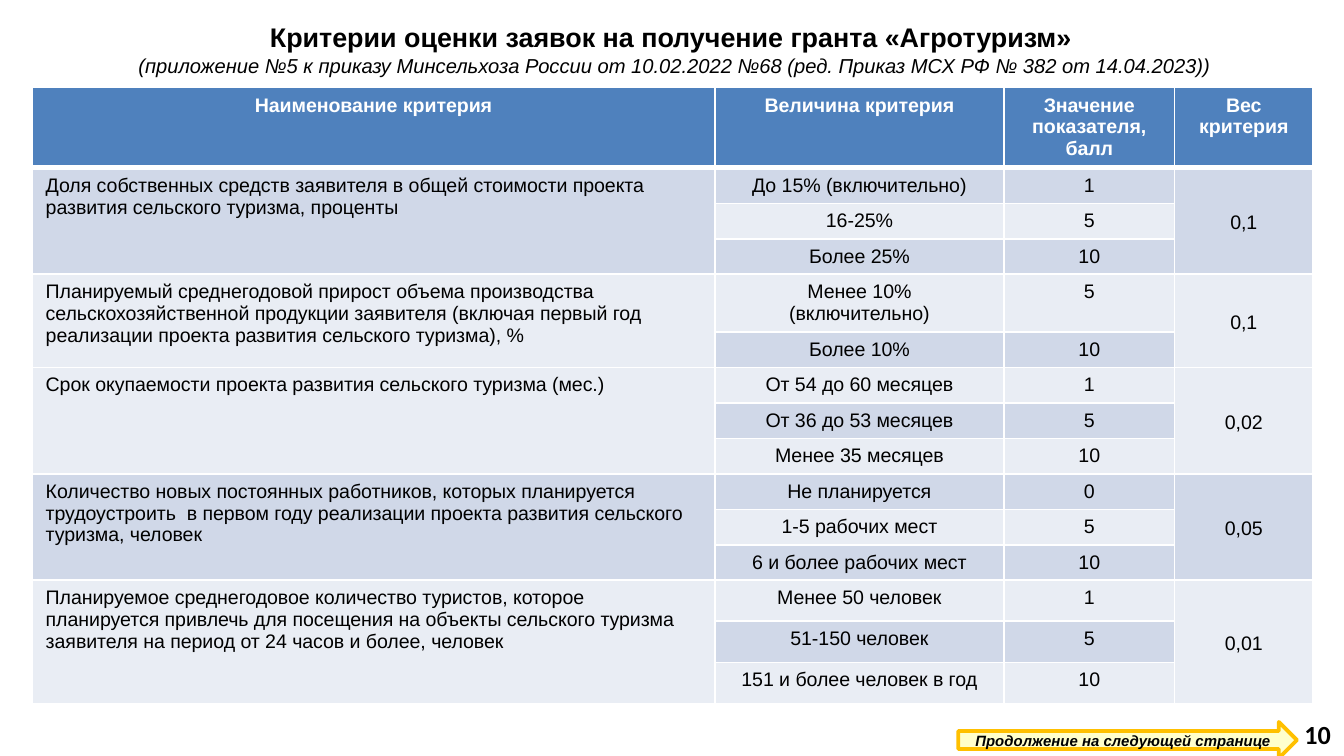
from dataclasses import dataclass

from lxml.etree import SubElement
from pptx import Presentation
from pptx.dml.color import RGBColor
from pptx.enum.shapes import MSO_SHAPE
from pptx.enum.text import MSO_ANCHOR, MSO_AUTO_SIZE, PP_ALIGN
from pptx.oxml.ns import qn
from pptx.slide import Slide
from pptx.table import Table, _Cell
from pptx.text.text import Font
from pptx.util import Inches, Pt

COLORS = {
    "header": "4F81BD",
    "band_dark": "D0D8E8",
    "band_light": "E9EDF4",
    "white": "FFFFFF",
    "black": "000000",
    "arrow_fill": "FFFFCC",
    "arrow_line": "FFC000",
}
SLIDE_WIDTH = Inches(10)
SLIDE_HEIGHT = SLIDE_WIDTH * 9 // 16
COLUMN_WIDTHS = (5.08, 2.15, 1.27, 1.03)
HEADER_POINTS = 43
HEADERS = ("Наименование критерия", "Величина критерия", "Значение показателя, балл", "Вес критерия")


@dataclass(frozen=True)
class Level:
    value: str
    score: str
    points: int = 19


@dataclass(frozen=True)
class Criterion:
    name: str
    weight: str
    levels: tuple[Level, ...]


CRITERIA = (
    Criterion(
        "Доля собственных средств заявителя в общей стоимости проекта развития сельского туризма, проценты",
        "0,1",
        (Level("До 15% (включительно)", "1"), Level("16-25%", "5"), Level("Более 25%", "10")),
    ),
    Criterion(
        "Планируемый среднегодовой прирост объема производства сельскохозяйственной продукции заявителя "
        "(включая первый год реализации проекта развития сельского туризма), %",
        "0,1",
        (Level("Менее 10%\n(включительно)", "5", 31), Level("Более 10%", "10")),
    ),
    Criterion(
        "Срок окупаемости проекта развития сельского туризма (мес.)",
        "0,02",
        (Level("От 54 до 60 месяцев", "1"), Level("От 36 до 53 месяцев", "5"), Level("Менее 35 месяцев", "10")),
    ),
    Criterion(
        "Количество новых постоянных работников, которых планируется трудоустроить  в первом году "
        "реализации проекта развития сельского туризма, человек",
        "0,05",
        (Level("Не планируется", "0"), Level("1-5 рабочих мест", "5"), Level("6 и более рабочих мест", "10")),
    ),
    Criterion(
        "Планируемое среднегодовое количество туристов, которое планируется привлечь для посещения "
        "на объекты сельского туризма заявителя на период от 24 часов и более, человек",
        "0,01",
        (
            Level("Менее 50 человек", "1", 22),
            Level("51-150 человек", "5", 22),
            Level("151 и более человек в год", "10", 22),
        ),
    ),
)


def share_box(left: float, top: float, width: float, height: float) -> tuple[int, int, int, int]:
    """Turn shares of the slide's size into a left, top, width, height box."""
    return (
        int(left * SLIDE_WIDTH),
        int(top * SLIDE_HEIGHT),
        int(width * SLIDE_WIDTH),
        int(height * SLIDE_HEIGHT),
    )


def color(name: str) -> RGBColor:
    """Look up a named colour."""
    return RGBColor.from_string(COLORS[name])


def set_font(font: Font, size: float, color_name: str = "black", bold: bool = False,
             italic: bool = False, family: str = "Arial") -> None:
    """Set every font property used on the slide."""
    font.name, font.size, font.bold, font.italic = family, Pt(size), bold, italic
    font.color.rgb = color(color_name)


def set_borders(cell: _Cell, top: float, bottom: float) -> None:
    """Draw white borders around a cell, with widths in points."""
    properties = cell._tc.get_or_add_tcPr()
    for tag, width in (("a:lnL", 1), ("a:lnR", 1), ("a:lnT", top), ("a:lnB", bottom)):
        line = SubElement(properties, qn(tag), w=str(Pt(width)))
        fill = SubElement(line, qn("a:solidFill"))
        SubElement(fill, qn("a:srgbClr"), val=COLORS["white"])


def write_cell(cell: _Cell, text: str, alignment: PP_ALIGN = PP_ALIGN.CENTER,
               anchor: MSO_ANCHOR = MSO_ANCHOR.TOP, header: bool = False) -> None:
    """Fill a cell with formatted text."""
    cell.text = text
    cell.vertical_anchor = anchor
    for paragraph in cell.text_frame.paragraphs:
        paragraph.alignment = alignment
        set_font(paragraph.font, 10.5, "white" if header else "black", bold=header)


def paint_table(table: Table) -> None:
    """Give all cells their banded fill, borders and bottom margin."""
    for index, row in enumerate(table.rows):
        band = "header" if index == 0 else "band_dark" if index % 2 else "band_light"
        for cell in row.cells:
            set_borders(cell, top=3 if index == 1 else 1, bottom=3 if index == 0 else 1)
            cell.fill.solid()
            cell.fill.fore_color.rgb = color(band)
            cell.margin_bottom = Inches(0.02)


def add_criteria_table(slide: Slide) -> None:
    """Add the table of criteria, levels, scores and weights."""
    heights = [HEADER_POINTS] + [level.points for criterion in CRITERIA for level in criterion.levels]
    box = share_box(0.024, 0.116, 0.953, Pt(sum(heights)) / SLIDE_HEIGHT)
    table = slide.shapes.add_table(len(heights), len(COLUMN_WIDTHS), *box).table
    for column, width in zip(table.columns, COLUMN_WIDTHS):
        column.width = Inches(width)
    for row, height in zip(table.rows, heights):
        row.height = Pt(height)
    paint_table(table)
    for column_index, header in enumerate(HEADERS):
        write_cell(table.cell(0, column_index), header, header=True)
    first = 1
    for criterion in CRITERIA:
        last = first + len(criterion.levels) - 1
        for column_index in (0, 3):
            table.cell(first, column_index).merge(table.cell(last, column_index))
        write_cell(table.cell(first, 0), criterion.name, PP_ALIGN.LEFT)
        write_cell(table.cell(first, 3), criterion.weight, anchor=MSO_ANCHOR.MIDDLE)
        for row_index, level in enumerate(criterion.levels, first):
            write_cell(table.cell(row_index, 1), level.value)
            write_cell(table.cell(row_index, 2), level.score)
        first = last + 1


def add_title(slide: Slide) -> None:
    """Place the title with its smaller italic second line."""
    title = slide.shapes.title
    title.left, title.top, title.width, title.height = share_box(0.052, 0.01, 0.9, 0.11)
    frame = title.text_frame
    frame.auto_size = MSO_AUTO_SIZE.NONE
    frame.vertical_anchor = MSO_ANCHOR.MIDDLE
    paragraph = frame.paragraphs[0]
    paragraph.alignment = PP_ALIGN.CENTER
    heading = paragraph.add_run()
    heading.text = "Критерии оценки заявок на получение гранта «Агротуризм» "
    set_font(heading.font, 14.4, bold=True)
    paragraph.add_line_break()
    source = paragraph.add_run()
    source.text = "(приложение №5 к приказу Минсельхоза России от 10.02.2022 №68 (ред. Приказ МСХ РФ № 382 от 14.04.2023))"
    set_font(source.font, 10.8, italic=True)


def add_page_number(slide: Slide) -> None:
    """Add the page number in the bottom right corner."""
    frame = slide.shapes.add_textbox(*share_box(0.952, 0.944, 0.048, 0.053)).text_frame
    frame.word_wrap = True
    frame.vertical_anchor = MSO_ANCHOR.MIDDLE
    paragraph = frame.paragraphs[0]
    paragraph.text = "10"
    paragraph.alignment = PP_ALIGN.RIGHT
    set_font(paragraph.font, 14, bold=True, family="Calibri")


def add_continuation_arrow(slide: Slide) -> None:
    """Add the arrow that points to the next page."""
    arrow = slide.shapes.add_shape(MSO_SHAPE.RIGHT_ARROW, *share_box(0.713, 0.955, 0.252, 0.048))
    arrow.shadow.inherit = False
    arrow.fill.solid()
    arrow.fill.fore_color.rgb = color("arrow_fill")
    arrow.line.color.rgb = color("arrow_line")
    arrow.line.width = Pt(2)
    frame = arrow.text_frame
    frame.word_wrap = False
    frame.vertical_anchor = MSO_ANCHOR.MIDDLE
    paragraph = frame.paragraphs[0]
    paragraph.text = "Продолжение на следующей странице"
    paragraph.alignment = PP_ALIGN.CENTER
    set_font(paragraph.font, 8, bold=True, italic=True)


def main() -> None:
    """Build and save the slide."""
    presentation = Presentation()
    presentation.slide_width, presentation.slide_height = SLIDE_WIDTH, SLIDE_HEIGHT
    slide = presentation.slides.add_slide(presentation.slide_layouts[5])
    add_title(slide)
    add_page_number(slide)
    add_criteria_table(slide)
    add_continuation_arrow(slide)
    presentation.save("out.pptx")


if __name__ == "__main__":
    main()
